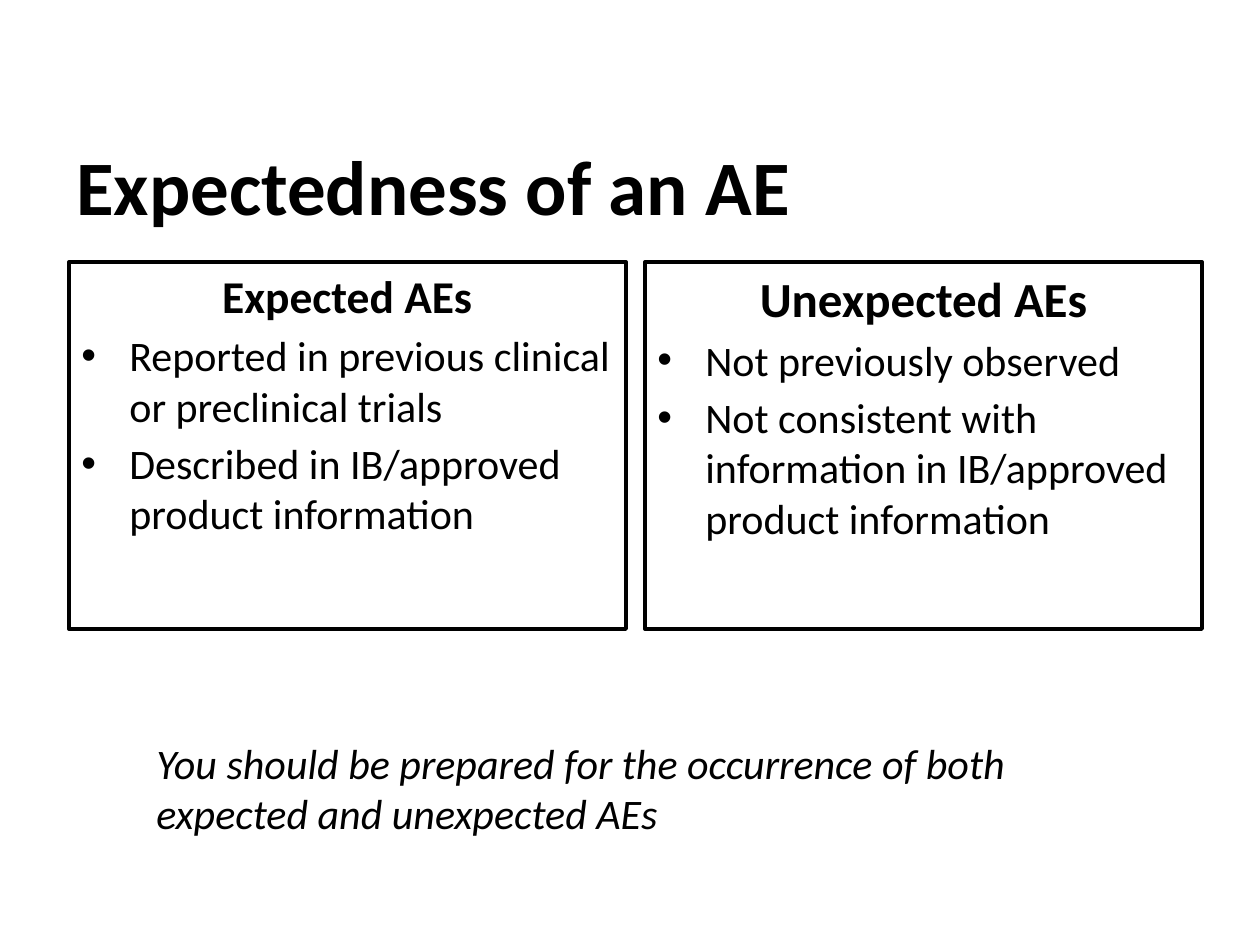
from lxml import etree
from pptx import Presentation
from pptx.dml.color import RGBColor
from pptx.enum.shapes import MSO_SHAPE as SHAPE
from pptx.enum.text import MSO_ANCHOR as ANCHOR, PP_ALIGN as ALIGN
from pptx.oxml.ns import qn
from pptx.util import Pt

PX = 914400 / 126
BLACK = "000000"


def px(*lengths):
    return [round(n * PX) for n in lengths]


def add_text(p, text, color=BLACK, **font):
    r = p.add_run()
    r.text = text
    r.font.color.rgb = RGBColor.from_string(color)
    for name, value in {"name": "Calibri", **font}.items():
        setattr(r.font, name, value)


prs = Presentation()
prs.slide_width, prs.slide_height = px(1260, 945)
s = prs.slides.add_slide(prs.slide_layouts[6])

# Title and closing note
texts = [
    ("Expectedness of an AE", (64, 106, 1160, 157), ANCHOR.MIDDLE,
     {"size": Pt(44), "bold": True}),
    ("You should be prepared for the occurrence of both expected and unexpected AEs",
     (144, 731, 983, 127), ANCHOR.TOP, {"size": Pt(24), "italic": True}),
]
for text, box, anchor, font in texts:
    tf = s.shapes.add_textbox(*px(*box)).text_frame
    tf.word_wrap = True
    tf.vertical_anchor = anchor
    add_text(tf.paragraphs[0], text, **font)

# Two framed columns
columns = [
    ("Expected AEs", 26, ["Reported in previous clinical or preclinical trials",
                          "Described in IB/approved product information"]),
    ("Unexpected AEs", 28, ["Not previously observed",
                            "Not consistent with information in IB/approved product information"]),
]
indent, = px(48)
for i, (heading, size, bullets) in enumerate(columns):
    sp = s.shapes.add_shape(SHAPE.RECTANGLE, *px(69 + 576 * i, 262, 557, 367))
    sp.shadow.inherit = False
    sp.fill.background()
    sp.line.color.rgb = RGBColor.from_string(BLACK)
    sp.line.width = Pt(2.25)
    tf = sp.text_frame
    tf.word_wrap = True
    tf.vertical_anchor = ANCHOR.TOP
    p = tf.paragraphs[0]
    p.alignment = ALIGN.CENTER
    add_text(p, heading, size=Pt(size), bold=True)
    for bullet in bullets:
        p = tf.add_paragraph()
        p.alignment = ALIGN.LEFT
        p.space_before = Pt(4)
        pPr = p._p.get_or_add_pPr()
        pPr.set("marL", str(indent))
        pPr.set("indent", str(-indent))
        etree.SubElement(pPr, qn("a:buFont")).set("typeface", "Arial")
        etree.SubElement(pPr, qn("a:buChar")).set("char", "•")
        add_text(p, bullet, size=Pt(24))

prs.save("out.pptx")
